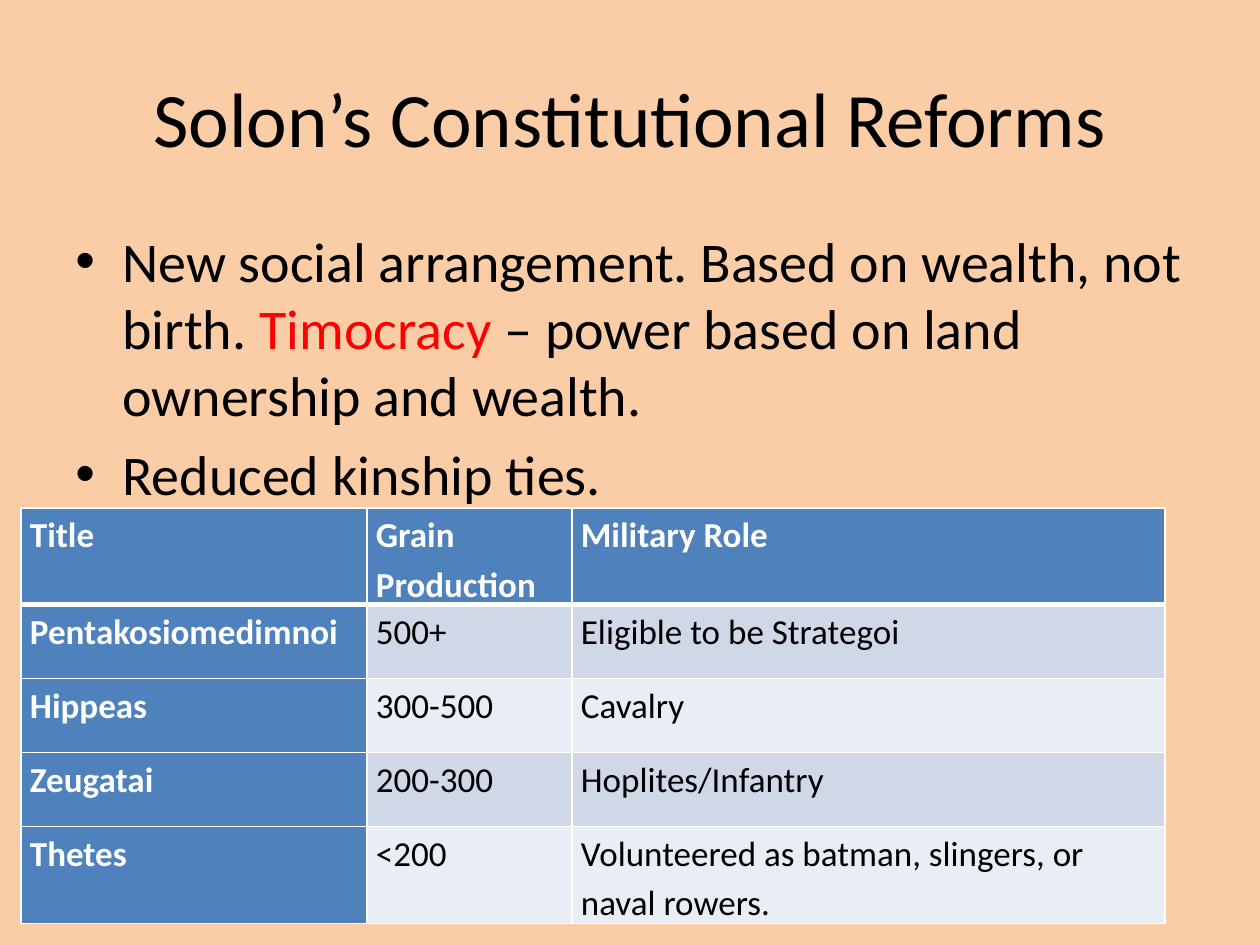
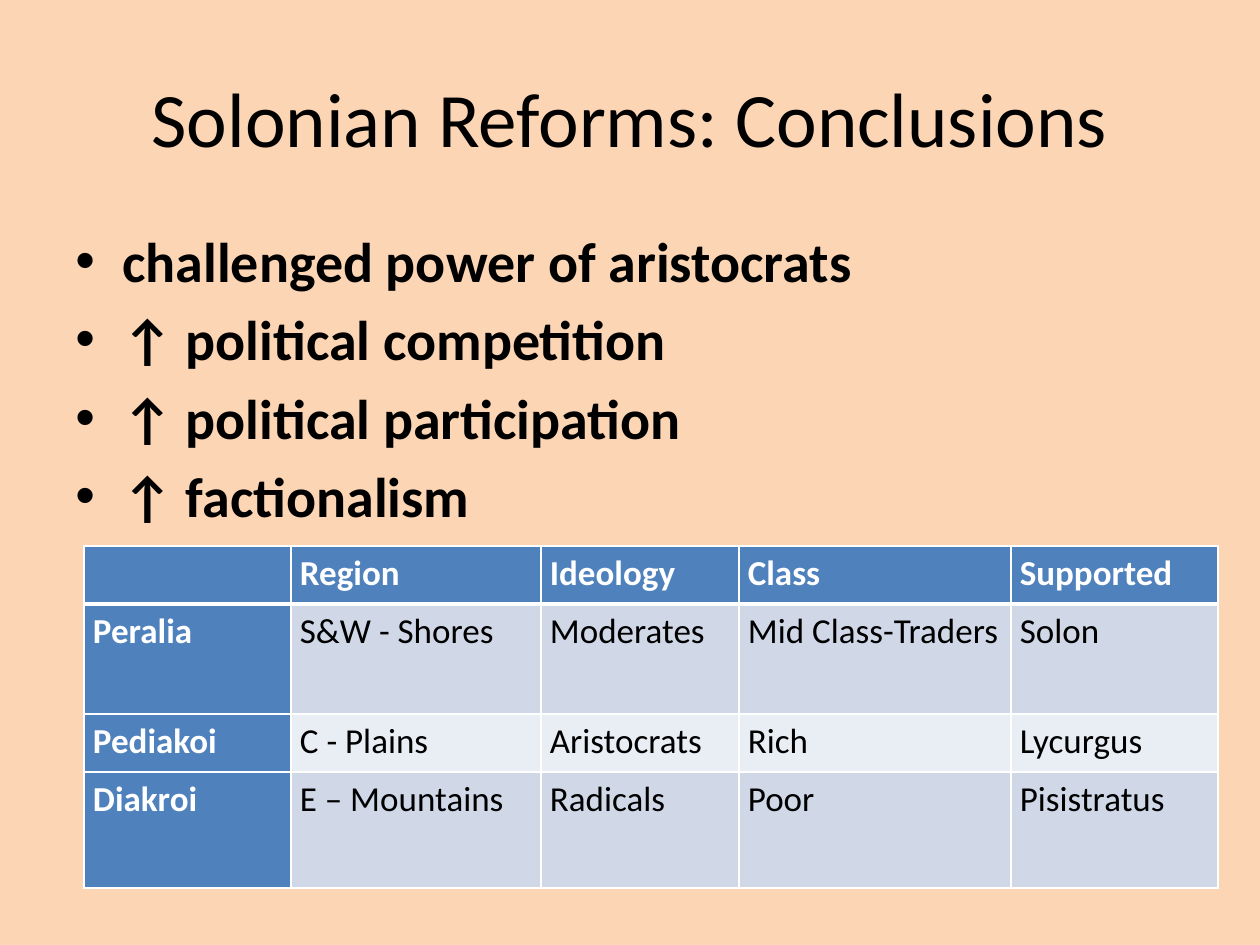
from lxml.etree import SubElement
from pptx import Presentation
from pptx.dml.color import RGBColor as Rgb
from pptx.enum.text import MSO_ANCHOR as Anchor, PP_ALIGN as Align
from pptx.oxml.ns import qn
from pptx.util import Emu, Pt

SCALE = 914400 / 126
FONT = "Calibri"
BLACK, WHITE, RED = "000000", "FFFFFF", "FF0000"
BLUE, BANDS = "4F81BD", ("E9EDF4", "D0D8E8")
HEAD = {"size": Pt(44), "name": FONT, "bold": False}
BODY = {"size": Pt(32), "name": FONT}
CELL = {"size": Pt(20), "name": FONT}


def px(num):
    """Turn px into EMU."""
    return Emu(round(num * SCALE))


def paint(item, tone):
    """Give a fill a solid colour from a hex string."""
    item.solid()
    item.fore_color.rgb = Rgb.from_string(tone)


def style(item, form):
    """Set each attribute of an object from a dict."""
    for key, value in form.items():
        setattr(item, key, value)


def write(para, text, form, tone=BLACK):
    """Add one formatted run to a paragraph."""
    run = para.add_run()
    run.text = text
    style(run.font, form)
    run.font.color.rgb = Rgb.from_string(tone)


def start(deck, title, tone):
    """Add a slide with its background and title."""
    slide = deck.slides.add_slide(deck.slide_layouts[5])
    paint(slide.background.fill, tone)
    head = slide.shapes.title
    style(head, {"left": px(63), "top": px(38), "width": px(1134), "height": px(158)})
    head.text_frame.vertical_anchor = Anchor.MIDDLE
    para = head.text_frame.paragraphs[0]
    para.alignment = Align.CENTER
    write(para, title, HEAD)
    return slide


def bullets(slide, items, bold=False):
    """Add a bulleted list, each item a list of (text, colour) pairs."""
    frame = slide.shapes.add_textbox(px(63), px(220), px(1134), px(624)).text_frame
    frame.word_wrap = True
    for spot, item in enumerate(items):
        para = frame.add_paragraph() if spot else frame.paragraphs[0]
        para.space_before = Pt(6.4)
        props = para._p.get_or_add_pPr()
        props.set("marL", str(px(47)))
        props.set("indent", str(-px(47)))
        SubElement(props, qn("a:buFont"), typeface="Arial")
        SubElement(props, qn("a:buChar"), char="•")
        for text, tone in item:
            write(para, text, BODY | {"bold": bold}, tone)


def edge(cell, side, width):
    """Draw one white border of a cell."""
    props = cell._tc.get_or_add_tcPr()
    line = SubElement(props, qn(f"a:ln{side}"), w=str(Pt(width)))
    SubElement(SubElement(line, qn("a:solidFill")), qn("a:srgbClr"), val=WHITE)


def fill(cell, text, row, col):
    """Format a cell by its place in the table and write its text."""
    lead = row == 0 or col == 0
    style(cell, {"margin_left": px(9), "margin_right": px(9),
                 "margin_top": 0, "margin_bottom": 0})
    widths = {"L": 1, "R": 1, "T": 3 if row == 1 else 1, "B": 3 if row == 0 else 1}
    for side, width in widths.items():
        edge(cell, side, width)
    paint(cell.fill, BLUE if lead else BANDS[row % 2])
    para = cell.text_frame.paragraphs[0]
    para.line_spacing = 1.15
    if text:
        write(para, text, CELL | {"bold": lead}, WHITE if lead else BLACK)


def grid(slide, left, top, cols, rows, data):
    """Add a table with a header row and a header column."""
    table = slide.shapes.add_table(len(rows), len(cols), px(left), px(top),
                                   px(sum(cols)), px(sum(rows))).table
    for part, width in zip(table.columns, cols):
        part.width = px(width)
    for part, height in zip(table.rows, rows):
        part.height = px(height)
    for row, texts in enumerate(data):
        for col, text in enumerate(texts):
            fill(table.cell(row, col), text, row, col)


def main():
    """Build both slides and save them."""
    deck = Presentation()
    style(deck, {"slide_width": px(1260), "slide_height": px(945)})

    slide = start(deck, "Solon’s Constitutional Reforms", "FBCDA7")
    bullets(slide, [
        [("New social arrangement. Based on wealth, not birth. ", BLACK),
         ("Timocracy ", RED),
         ("– power based on land ownership and wealth.", BLACK)],
        [("Reduced kinship ties.", BLACK)],
    ])
    grid(slide, 21, 508, [346, 205, 593], [92, 74, 74, 74, 90], [
        ["Title", "Grain Production", "Military Role"],
        ["Pentakosiomedimnoi", "500+", "Eligible to be Strategoi"],
        ["Hippeas", "300-500", "Cavalry"],
        ["Zeugatai", "200-300", "Hoplites/Infantry"],
        ["Thetes", "<200", "Volunteered as batman, slingers, or naval rowers."],
    ])

    slide = start(deck, "Solonian Reforms: Conclusions", "FCD5B5")
    gains = ["political competition", "political participation", "factionalism"]
    points = ["challenged power of aristocrats"] + [f"↑ {gain}" for gain in gains]
    bullets(slide, [[(point, BLACK)] for point in points], bold=True)
    grid(slide, 84, 546, [207, 250, 198, 272, 207], [58, 110, 58, 116], [
        ["", "Region", "Ideology", "Class", "Supported"],
        ["Peralia", "S&W - Shores", "Moderates", "Mid Class-Traders", "Solon"],
        ["Pediakoi", "C - Plains", "Aristocrats", "Rich", "Lycurgus"],
        ["Diakroi", "E – Mountains", "Radicals", "Poor", "Pisistratus"],
    ])
    deck.save("out.pptx")


if __name__ == "__main__":
    main()
